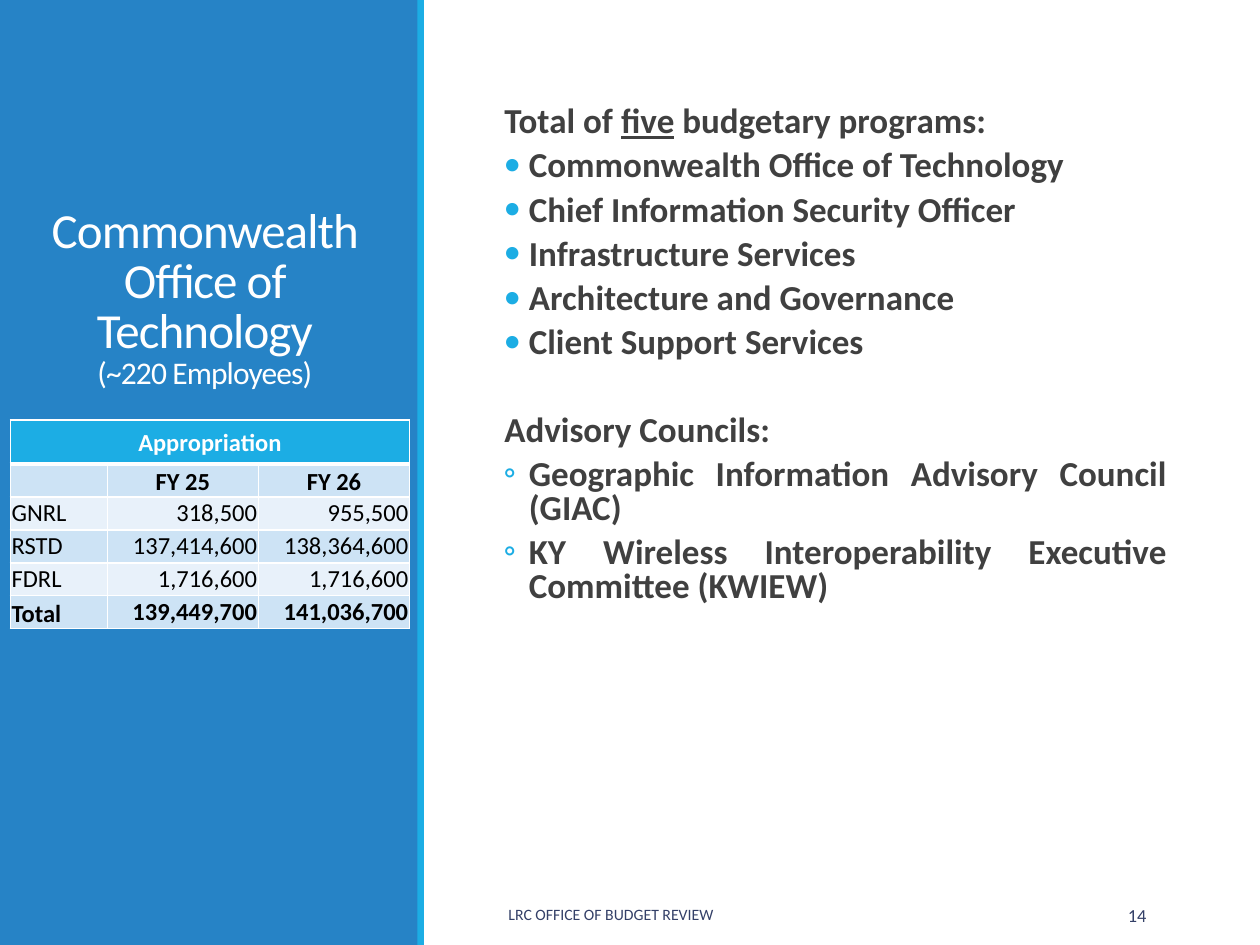
from lxml import etree
from pptx import Presentation
from pptx.dml.color import RGBColor
from pptx.enum.shapes import MSO_SHAPE
from pptx.enum.text import MSO_ANCHOR, PP_ALIGN
from pptx.oxml.ns import qn
from pptx.util import Pt

RECTANGLE = MSO_SHAPE.RECTANGLE
TOP, MIDDLE, BOTTOM = MSO_ANCHOR.TOP, MSO_ANCHOR.MIDDLE, MSO_ANCHOR.BOTTOM
LEFT, CENTER, RIGHT = PP_ALIGN.LEFT, PP_ALIGN.CENTER, PP_ALIGN.RIGHT
JUSTIFY = PP_ALIGN.JUSTIFY

WHITE = RGBColor(0xFF, 0xFF, 0xFF)
BLACK = RGBColor(0, 0, 0)
BLUE = RGBColor(0x26, 0x83, 0xC6)
CYAN = RGBColor(0x1C, 0xAD, 0xE4)
GRAY = RGBColor(0x40, 0x40, 0x40)
NAVY = RGBColor(0x34, 0x40, 0x68)
BAND_DARK = RGBColor(0xCD, 0xE3, 0xF5)
BAND_LIGHT = RGBColor(0xE8, 0xF1, 0xFA)

FONT = "Calibri"
TABLE_SIZE = 14
PROGRAMS = [
    "Commonwealth Office of Technology",
    "Chief Information Security Officer",
    "Infrastructure Services",
    "Architecture and Governance",
    "Client Support Services",
]
COUNCILS = [
    "Geographic Information Advisory Council (GIAC)",
    "KY Wireless Interoperability Executive Committee (KWIEW)",
]
APPROPRIATIONS = [
    ["", "FY 25", "FY 26"],
    ["GNRL", "318,500", "955,500"],
    ["RSTD", "137,414,600", "138,364,600"],
    ["FDRL", "1,716,600", "1,716,600"],
    ["Total", "139,449,700", "141,036,700"],
]


def add_panel(slide, left, width, color):
    shape = slide.shapes.add_shape(RECTANGLE, Pt(left), 0, Pt(width), Pt(540))
    shape.shadow.inherit = False
    shape.fill.solid()
    shape.fill.fore_color.rgb = color
    shape.line.fill.background()


def add_text_box(slide, left, top, width, height, anchor):
    shape = slide.shapes.add_textbox(Pt(left), Pt(top), Pt(width), Pt(height))
    frame = shape.text_frame
    frame.word_wrap = True
    frame.vertical_anchor = anchor
    return frame


def add_run(paragraph, text, size, color, bold=False, underline=False):
    run = paragraph.add_run()
    run.text = text
    font = run.font
    font.name, font.size, font.bold = FONT, Pt(size), bold
    font.color.rgb = color
    if underline:
        font.underline = True
    return run


def add_title(slide):
    frame = add_text_box(slide, 0, 46.8, 234, 180, BOTTOM)
    paragraph = frame.paragraphs[0]
    paragraph.alignment = CENTER
    paragraph.line_spacing = 0.85
    name = add_run(paragraph, "Commonwealth Office of Technology", 28, WHITE)
    paragraph.add_line_break()
    staff = add_run(paragraph, "(~220 Employees)", 18, WHITE)
    for run in (name, staff):
        run.font._element.set("spc", "-50")


def add_body_paragraph(frame, text="", bullet=None, space_before=2):
    first = frame.paragraphs[0]
    paragraph = frame.add_paragraph() if first.runs else first
    paragraph.alignment = JUSTIFY
    paragraph.line_spacing = 0.8
    paragraph.space_before, paragraph.space_after = Pt(space_before), Pt(4)
    properties = paragraph._p.get_or_add_pPr()
    properties.set("marL", str(Pt(30 if bullet else 16)))
    properties.set("indent", str(Pt(-14.4 if bullet else 0)))
    if bullet:
        color = etree.SubElement(properties, qn("a:buClr"))
        etree.SubElement(color, qn("a:srgbClr")).set("val", str(CYAN))
        etree.SubElement(properties, qn("a:buFont")).set("typeface", FONT)
        etree.SubElement(properties, qn("a:buChar")).set("char", bullet)
    if text:
        add_run(paragraph, text, 20, GRAY, bold=True)
    return paragraph


def add_body(slide):
    frame = add_text_box(slide, 272.2, 57.6, 394.5, 450.7, TOP)
    frame.margin_left = frame.margin_right = 0
    heading = add_body_paragraph(frame, "Total of ")
    add_run(heading, "five", 20, GRAY, bold=True, underline=True)
    add_run(heading, " budgetary programs:", 20, GRAY, bold=True)
    for program in PROGRAMS:
        add_body_paragraph(frame, program, "•")
    add_body_paragraph(frame, "Advisory Councils:", space_before=27.2)
    for council in COUNCILS:
        add_body_paragraph(frame, council, "◦")


def add_footer(slide, left, width, text, size, alignment):
    frame = add_text_box(slide, left, 508.3, width, 28.8, MIDDLE)
    paragraph = frame.paragraphs[0]
    paragraph.alignment = alignment
    add_run(paragraph, text, size, NAVY)


def set_borders(cell, bottom_width):
    properties = cell._tc.get_or_add_tcPr()
    for side, width in (("L", 1), ("R", 1), ("T", 1), ("B", bottom_width)):
        line = etree.SubElement(properties, qn(f"a:ln{side}"))
        line.set("w", str(Pt(width)))
        fill = etree.SubElement(line, qn("a:solidFill"))
        etree.SubElement(fill, qn("a:srgbClr")).set("val", str(WHITE))


def fill_cell(cell, text, fill, color, bold, alignment, anchor, bottom_width=1):
    set_borders(cell, bottom_width)
    cell.fill.solid()
    cell.fill.fore_color.rgb = fill
    cell.margin_left = cell.margin_right = cell.margin_top = Pt(0.72)
    cell.margin_bottom = 0
    cell.vertical_anchor = anchor
    paragraph = cell.text_frame.paragraphs[0]
    paragraph.alignment = alignment
    if text:
        add_run(paragraph, text, TABLE_SIZE, color, bold)
    else:
        end = paragraph._p.get_or_add_endParaRPr()
        end.set("sz", str(TABLE_SIZE * 100))


def add_appropriation_table(slide):
    row_count = len(APPROPRIATIONS) + 1
    frame = slide.shapes.add_table(
        row_count, 3, Pt(5.9), Pt(240), Pt(228.2), Pt(119.2))
    table = frame.table
    table.first_row = table.horz_banding = False
    for column, width in zip(table.columns, (55.4, 86.4, 86.4)):
        column.width = Pt(width)
    for index, row in enumerate(table.rows):
        row.height = Pt(18.8 if index else 25.2)
    for column in range(3):
        fill_cell(table.cell(0, column), "" if column else "Appropriation",
                  CYAN, WHITE, True, CENTER, MIDDLE, 3)
    table.cell(0, 0).merge(table.cell(0, 2))
    for row, values in enumerate(APPROPRIATIONS, 1):
        is_header, is_total = row == 1, row == row_count - 1
        fill = BAND_DARK if row % 2 else BAND_LIGHT
        for column, text in enumerate(values):
            alignment = CENTER if is_header else RIGHT if column else LEFT
            at_bottom = is_header or (is_total and column == 0)
            fill_cell(table.cell(row, column), text, fill, BLACK,
                      is_header or is_total, alignment,
                      BOTTOM if at_bottom else TOP)


def main():
    presentation = Presentation()
    presentation.slide_width, presentation.slide_height = Pt(720), Pt(540)
    slide = presentation.slides.add_slide(presentation.slide_layouts[6])
    add_panel(slide, 0, 239, BLUE)
    add_panel(slide, 238.5, 3.8, CYAN)
    add_title(slide)
    add_body(slide)
    add_footer(slide, 283.5, 274.5, "LRC OFFICE OF BUDGET REVIEW", 9, LEFT)
    add_footer(slide, 584.6, 77.6, "14", 10.5, RIGHT)
    add_appropriation_table(slide)
    presentation.save("out.pptx")


if __name__ == "__main__":
    main()
